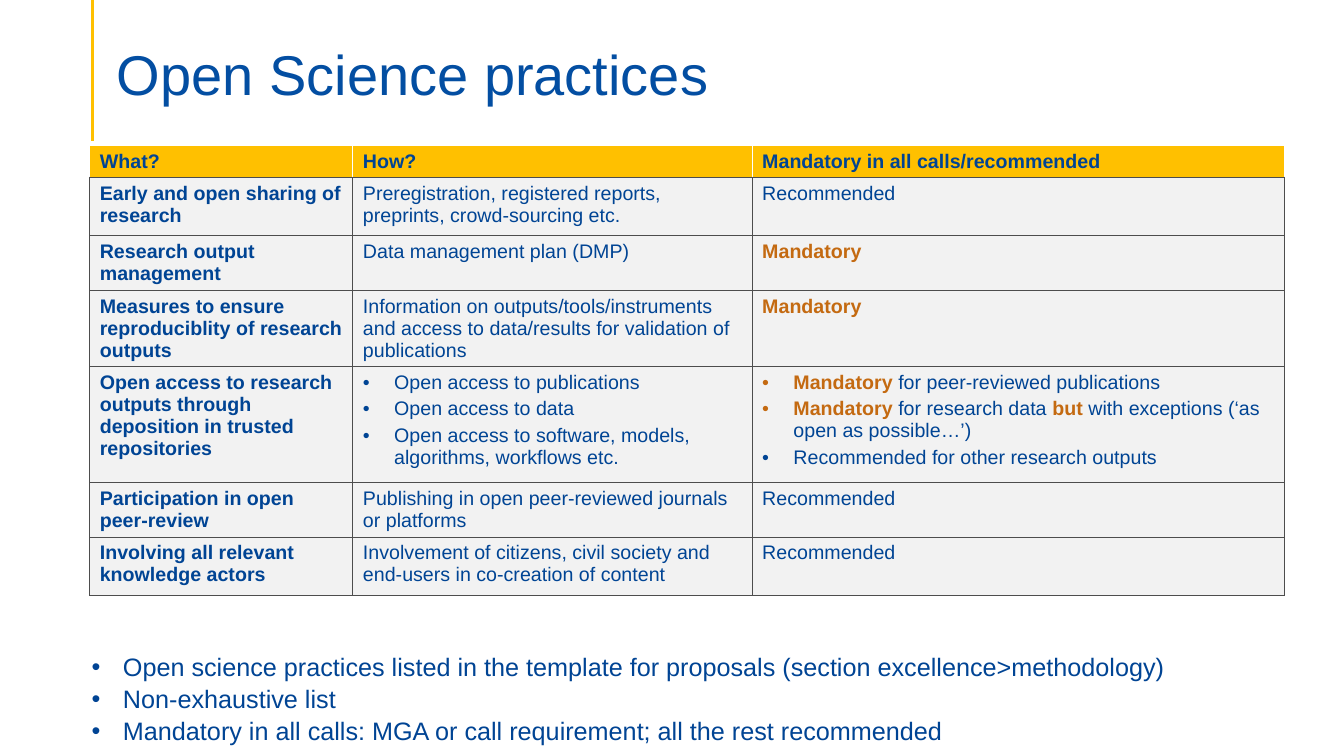
import pptx
import pptx.dml.color
import pptx.enum.shapes
import pptx.enum.text
import pptx.oxml.ns
import pptx.util
from lxml import etree

Inches = pptx.util.Inches
Pt = pptx.util.Pt
NAVY, TITLE_BLUE, ORANGE = "004494", "034EA2", "C46A11"
GOLD, PALE, GREY, WHITE = "FFC000", "F2F2F2", "4D4D4D", "FFFFFF"

COLUMN_WIDTHS = [2.61, 3.96, 5.28]
ROW_HEIGHTS = [0.31, 0.58, 0.54, 0.76, 1.15, 0.54, 0.58]

# Asterisks enclose emphasised words; a list makes a bulleted cell
ROWS = [
    ["What?", "How?", "Mandatory in all calls/recommended"],
    ["Early and open sharing of research",
     "Preregistration, registered reports, preprints, crowd-sourcing etc.",
     "Recommended"],
    ["Research output management", "Data management plan (DMP)", "*Mandatory*"],
    ["Measures to ensure reproduciblity of research outputs",
     "Information on outputs/tools/instruments and access to data/results "
     "for validation of publications",
     "*Mandatory*"],
    ["Open access to research outputs through deposition in trusted repositories",
     ["Open access to publications",
      "Open access to data",
      "Open access to software, models, algorithms, workflows etc."],
     ["*Mandatory* for peer-reviewed publications",
      "*Mandatory* for research data* but *with exceptions (‘as open as possible…’)",
      "Recommended for other research outputs"]],
    ["Participation in open peer-review",
     "Publishing in open peer-reviewed journals or platforms",
     "Recommended"],
    ["Involving all relevant knowledge actors",
     "Involvement of citizens, civil society and end-users in co-creation of content",
     "Recommended"],
]
NOTES = [
    "Open science practices listed in the template for proposals "
    "(section excellence>methodology)",
    "Non-exhaustive list",
    "Mandatory in all calls: MGA or call requirement; all the rest recommended",
]


def colour(value):
    return pptx.dml.color.RGBColor.from_string(value)


def set_values(target, values):
    for name, value in values.items():
        setattr(target, name, value)


def add_element(parent, tag, **attributes):
    return etree.SubElement(parent, pptx.oxml.ns.qn(tag), attributes)


def add_bullet(para):
    properties = para._p.get_or_add_pPr()
    indent = Inches(0.31)
    properties.set("marL", str(indent))
    properties.set("indent", str(-indent))
    add_element(properties, "a:buFont", typeface="Arial")
    add_element(properties, "a:buChar", char="•")


def write_text(frame, lines, size, color=NAVY, bold=False, bullets=False, spacing=None):
    for index, line in enumerate(lines):
        para = frame.add_paragraph() if index else frame.paragraphs[0]
        if bullets:
            add_bullet(para)
        set_values(para, spacing or {})
        for part, words in enumerate(line.split("*")):
            if words:
                emphasised = part % 2 == 1
                span = para.add_run()
                span.text = words
                set_values(span.font, {"name": "Arial", "size": Pt(size),
                                       "bold": bold or emphasised})
                span.font.color.rgb = colour(ORANGE if emphasised else color)


def set_borders(cell, colours):
    properties = cell._tc.get_or_add_tcPr()
    for side, value in colours.items():
        line = add_element(properties, "a:ln" + side, w=str(Pt(1)))
        add_element(add_element(line, "a:solidFill"), "a:srgbClr", val=value)


def add_practices_table(page):
    frame = page.shapes.add_table(len(ROWS), len(COLUMN_WIDTHS), Inches(0.89), Inches(1.44),
                                  Inches(sum(COLUMN_WIDTHS)), Inches(sum(ROW_HEIGHTS)))
    table = frame.table
    for column, width in zip(table.columns, COLUMN_WIDTHS):
        column.width = Inches(width)
    for row, height in zip(table.rows, ROW_HEIGHTS):
        row.height = Inches(height)
    for row_index, texts in enumerate(ROWS):
        header = row_index == 0
        for column_index, content in enumerate(texts):
            cell = table.cell(row_index, column_index)
            edge = WHITE if header else GREY
            set_borders(cell, {"L": edge, "R": edge, "T": edge, "B": GREY})
            cell.fill.solid()
            cell.fill.fore_color.rgb = colour(GOLD if header else PALE)
            bulleted = isinstance(content, list)
            write_text(cell.text_frame, content if bulleted else [content], 14,
                       bold=header or column_index == 0, bullets=bulleted,
                       spacing={"space_after": Pt(3)} if bulleted else None)


def add_accent_line(page):
    line = page.shapes.add_connector(pptx.enum.shapes.MSO_CONNECTOR.STRAIGHT,
                                     Inches(0.92), Inches(0), Inches(0.92), Inches(1.4))
    line.line.color.rgb = colour(GOLD)
    line.line.width = Pt(2.25)
    add_element(line._element.spPr, "a:effectLst")


def place_placeholder(box, left, top, width, height, frame_values):
    set_values(box, {"left": Inches(left), "top": Inches(top),
                     "width": Inches(width), "height": Inches(height)})
    set_values(box.text_frame, {"word_wrap": True,
                                "auto_size": pptx.enum.text.MSO_AUTO_SIZE.NONE,
                                **frame_values})
    return box.text_frame


def main():
    deck = pptx.Presentation()
    set_values(deck, {"slide_width": Inches(13.33), "slide_height": Inches(7.5)})
    page = deck.slides.add_slide(deck.slide_layouts[1])
    anchors = pptx.enum.text.MSO_ANCHOR
    left_align = pptx.enum.text.PP_ALIGN.LEFT

    # Title with its accent line
    add_accent_line(page)
    title = place_placeholder(page.shapes.title, 1.06, 0.21, 11.5, 0.86,
                              {"vertical_anchor": anchors.BOTTOM, "margin_bottom": 0})
    write_text(title, ["Open Science practices"], 40, TITLE_BLUE,
               spacing={"alignment": left_align, "line_spacing": 0.9})

    # Table of practices
    add_practices_table(page)

    # Closing list
    notes = place_placeholder(page.placeholders[1], 0.81, 6.4, 11.5, 1.01,
                              {"vertical_anchor": anchors.TOP})
    write_text(notes, NOTES, 18, bullets=True,
               spacing={"space_before": Pt(0), "line_spacing": 1.05})

    deck.save("out.pptx")


if __name__ == "__main__":
    main()
